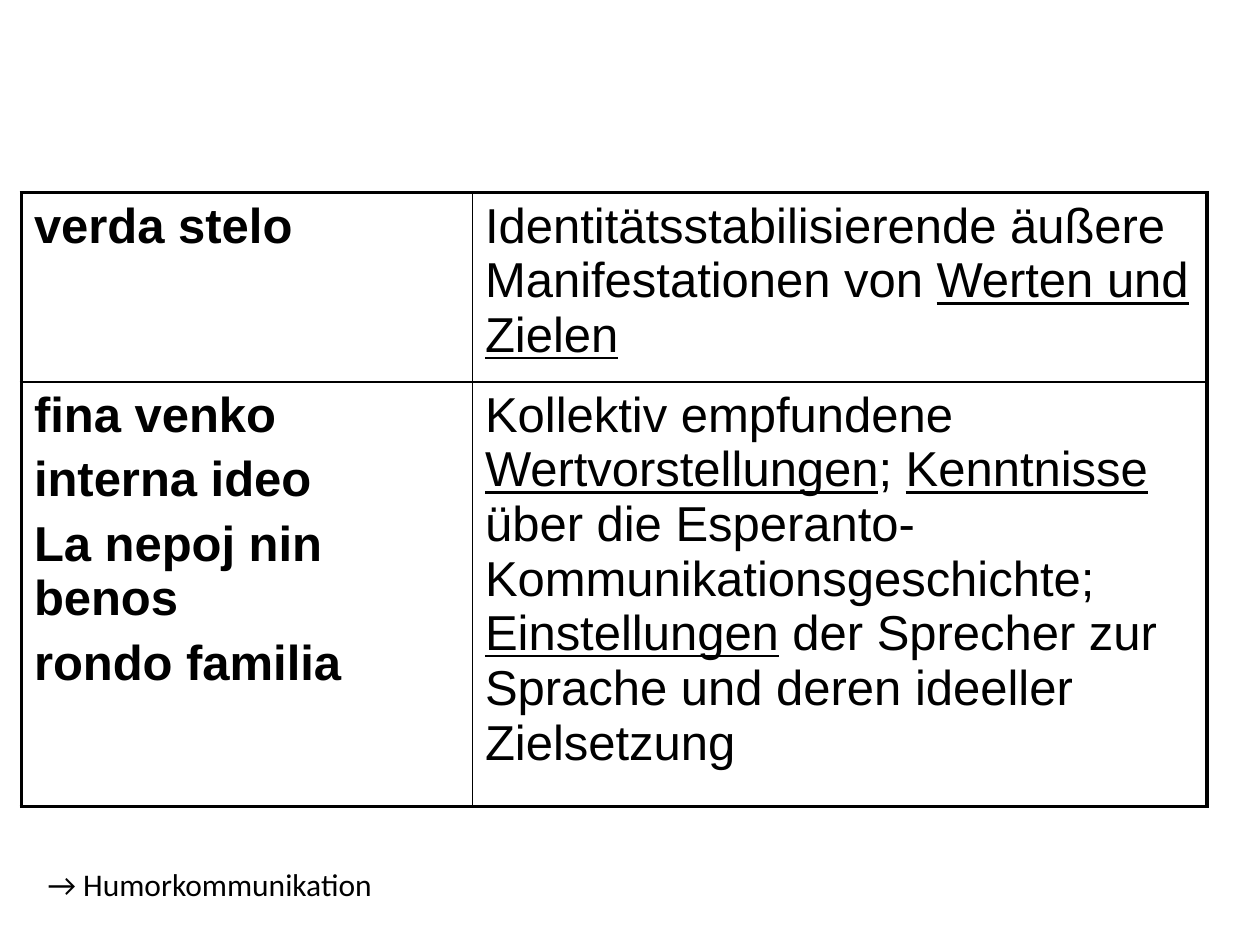
from lxml.etree import SubElement
from pptx import Presentation
from pptx.dml.color import RGBColor
from pptx.oxml.ns import qn
from pptx.util import Inches, Pt

COLORS = {"ink": "000000"}
INK = RGBColor.from_string(COLORS["ink"])
OUTER, INNER = Pt(2.25), Pt(1)

# Each cell is a list of paragraphs, each paragraph a list of (text, underlined).
ROWS = [
    [
        [[("verda stelo", False)]],
        [[("Identitätsstabilisierende äußere Manifestationen von ", False),
          ("Werten und Zielen", True)]],
    ],
    [
        [[(term, False)] for term in
         ("fina venko", "interna ideo", "La nepoj nin benos", "rondo familia")],
        [[("Kollektiv empfundene ", False),
          ("Wertvorstellungen", True),
          ("; ", False),
          ("Kenntnisse", True),
          (" über die Esperanto-Kommunikationsgeschichte; ", False),
          ("Einstellungen", True),
          (" der Sprecher zur Sprache und deren ideeller Zielsetzung", False)]],
    ],
]


def add_border(cell, side, width):
    line = SubElement(cell._tc.get_or_add_tcPr(), qn(f"a:ln{side}"), w=str(int(width)))
    fill = SubElement(line, qn("a:solidFill"))
    SubElement(fill, qn("a:srgbClr"), val=COLORS["ink"])


def style_run(run, font_name, size):
    run.font.name = font_name
    run.font.size = Pt(size)
    run.font.color.rgb = INK


prs = Presentation()
prs.slide_width, prs.slide_height = Inches(10), Inches(7.5)
slide = prs.slides.add_slide(prs.slide_layouts[6])

# Table of expressions and their meaning
terms = slide.shapes.add_table(
    2, 2, Inches(0.17), Inches(1.53), Inches(9.41), Inches(4.87)).table
terms.first_row = terms.horz_banding = False
for column, width in zip(terms.columns, (3.58, 5.83)):
    column.width = Inches(width)
for row, height in zip(terms.rows, (1.5, 3.37)):
    row.height = Inches(height)

for r, row in enumerate(ROWS):
    for c, paragraphs in enumerate(row):
        cell = terms.cell(r, c)
        add_border(cell, "L", OUTER if c == 0 else INNER)
        add_border(cell, "R", OUTER if c == 1 else INNER)
        add_border(cell, "T", OUTER if r == 0 else INNER)
        add_border(cell, "B", OUTER if r == 1 else INNER)
        cell.fill.background()
        frame = cell.text_frame
        for i, pieces in enumerate(paragraphs):
            paragraph = frame.paragraphs[0] if i == 0 else frame.add_paragraph()
            paragraph.space_before = Pt(5.6)
            for text, underlined in pieces:
                run = paragraph.add_run()
                run.text = text
                style_run(run, "Arial", 28)
                run.font.bold = c == 0
                run.font.underline = underlined

# Closing remark
remark = slide.shapes.add_textbox(
    Inches(0.28), Inches(6.82), Inches(6.3), Inches(0.4)).text_frame
remark.word_wrap = True
remark.text = "→ Humorkommunikation"
style_run(remark.paragraphs[0].runs[0], "Calibri", 18)

prs.save("out.pptx")
